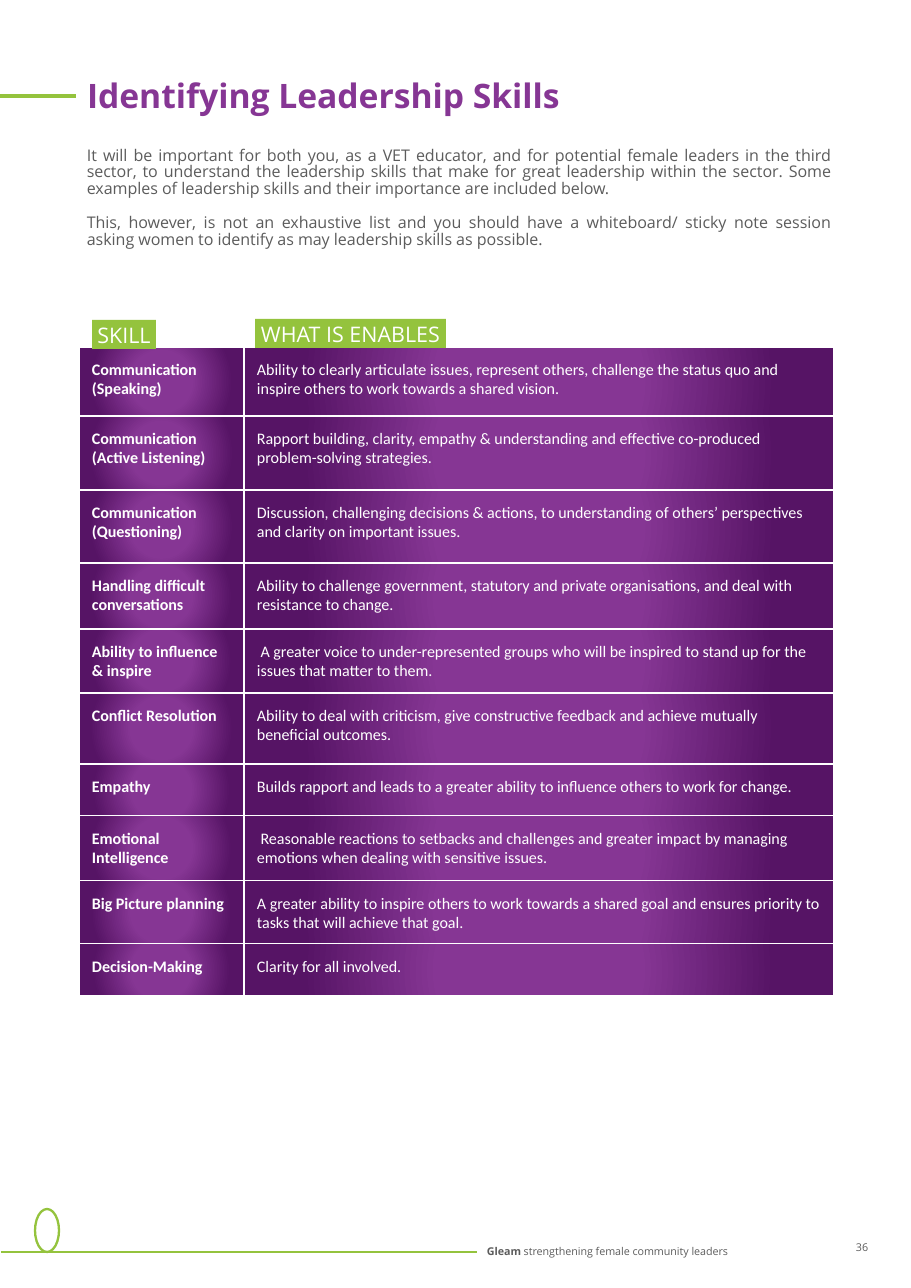
from lxml.etree import SubElement
from pptx import Presentation
from pptx.dml.color import RGBColor
from pptx.enum.shapes import MSO_CONNECTOR, MSO_SHAPE
from pptx.enum.text import MSO_ANCHOR, MSO_AUTO_SIZE, PP_ALIGN
from pptx.oxml import parse_xml
from pptx.oxml.ns import nsdecls, qn
from pptx.util import Emu, Pt

PURPLE = RGBColor(0x86, 0x36, 0x94)
DARK_PURPLE = RGBColor(0x56, 0x14, 0x65)
GREEN = RGBColor(0x94, 0xC3, 0x3D)
GREY = RGBColor(0x5C, 0x5C, 0x5C)
WHITE = RGBColor(0xFF, 0xFF, 0xFF)
HEADING_FONT = "Open Sans"
TABLE_FONT = "Calibri"
EMU_PER_PX = 8298

INTRO = [
    "It will be important for both you, as a VET educator, and for potential female leaders "
    "in the third sector, to understand the leadership skills that make for great leadership "
    "within the sector. Some examples of leadership skills and their importance are included below.",
    "This, however, is not an exhaustive list and you should have a whiteboard/ sticky note "
    "session asking women to identify as may leadership skills as possible.",
]
# Row height in px, skill, what it enables
SKILLS = [
    (69, "Communication\n(Speaking)",
     "Ability to clearly articulate issues, represent others, challenge the status quo and "
     "inspire others to work towards a shared vision."),
    (74, "Communication\n(Active Listening)",
     "Rapport building, clarity, empathy & understanding and effective co-produced "
     "problem-solving strategies."),
    (73, "Communication\n(Questioning)",
     "Discussion, challenging decisions & actions, to understanding of others’ perspectives "
     "and clarity on important issues."),
    (66, "Handling difficult conversations",
     "Ability to challenge government, statutory and private organisations, and deal with "
     "resistance to change."),
    (64, "Ability to influence & inspire",
     " A greater voice to under-represented groups who will be inspired to stand up for the "
     "issues that matter to them."),
    (71, "Conflict Resolution",
     "Ability to deal with criticism, give constructive feedback and achieve mutually "
     "beneficial outcomes."),
    (52, "Empathy",
     "Builds rapport and leads to a greater ability to influence others to work for change."),
    (65, "Emotional Intelligence",
     " Reasonable reactions to setbacks and challenges and greater impact by managing "
     "emotions when dealing with sensitive issues."),
    (63, "Big Picture planning",
     "A greater ability to inspire others to work towards a shared goal and ensures priority "
     "to tasks that will achieve that goal."),
    (52, "Decision-Making", "Clarity for all involved."),
]


def px(length):
    return Emu(length * EMU_PER_PX)


def style(para, size, color, name=HEADING_FONT, bold=False):
    para.font.size = Pt(size)
    para.font.name = name
    para.font.bold = bold
    para.font.color.rgb = color


def add_text_box(page, box, anchor=MSO_ANCHOR.TOP):
    shape = page.shapes.add_textbox(*map(px, box))
    shape.text_frame.word_wrap = True
    shape.text_frame.vertical_anchor = anchor
    return shape


def add_rule(page, left, right, top, width):
    line = page.shapes.add_connector(
        MSO_CONNECTOR.STRAIGHT, px(left), px(top), px(right), px(top))
    line.line.color.rgb = GREEN
    line.line.width = Pt(width)
    SubElement(line._element.spPr, qn("a:effectLst"))


def add_title(page, box):
    left, top, width, height = box
    title = page.shapes.title
    title.left, title.top, title.width, title.height = map(px, box)
    frame = title.text_frame
    frame.text = "Identifying Leadership Skills"
    frame.auto_size = MSO_AUTO_SIZE.NONE
    frame.vertical_anchor = MSO_ANCHOR.TOP
    para = frame.paragraphs[0]
    para.alignment = PP_ALIGN.LEFT
    para.line_spacing = Pt(24.4)
    style(para, 22, PURPLE, bold=True)
    add_rule(page, 0, left, top + 24, 2.25)


def add_intro(page, box):
    frame = add_text_box(page, box).text_frame
    frame.text = "\n".join(INTRO)
    for para in frame.paragraphs:
        para.alignment = PP_ALIGN.JUSTIFY
        para.line_spacing = Pt(11)
        para.space_after = Pt(11)
        style(para, 10.5, GREY)


def add_borders(cell):
    properties = cell._tc.get_or_add_tcPr()
    for side in ("lnL", "lnR", "lnT", "lnB"):
        properties.append(parse_xml(
            f'<a:{side} {nsdecls("a")} w="12700"><a:solidFill>'
            f'<a:srgbClr val="{WHITE}"/></a:solidFill></a:{side}>'))


def add_glow(cell):
    stops = "".join(
        f'<a:gs pos="{position}000"><a:srgbClr val="{color}"/></a:gs>'
        for position, color in ((4, PURPLE), (34, PURPLE), (80, DARK_PURPLE)))
    cell._tc.get_or_add_tcPr().append(parse_xml(
        f'<a:gradFill {nsdecls("a")} rotWithShape="1"><a:gsLst>{stops}</a:gsLst>'
        '<a:path path="circle"><a:fillToRect l="50000" t="50000" r="50000" b="50000"/>'
        '</a:path></a:gradFill>'))


def add_skills_table(page, box):
    left, top, width, header_height = box
    skill_width = 165
    heights = [header_height] + [height for height, _, _ in SKILLS]
    table = page.shapes.add_table(
        len(heights), 2, px(left), px(top), px(width), px(sum(heights))).table
    table.first_row = table.horz_banding = False
    table.columns[0].width = px(skill_width)
    table.columns[1].width = px(width - skill_width)
    for row, height in zip(table.rows, heights):
        row.height = px(height)

    # Open header row, covered by the labels
    for cell in table.rows[0].cells:
        cell.margin_top = cell.margin_bottom = 0
        style(cell.text_frame.paragraphs[0], 10.5, WHITE, TABLE_FONT)
        add_borders(cell)
        cell.fill.background()

    # Skill rows
    for row, (_, *texts) in zip(list(table.rows)[1:], SKILLS):
        for column, (cell, text) in enumerate(zip(row.cells, texts)):
            cell.text = text
            cell.margin_left = cell.margin_right = cell.margin_top = px(13)
            cell.margin_bottom = 0
            for para in cell.text_frame.paragraphs:
                style(para, 10.5, WHITE, TABLE_FONT, bold=column == 0)
            add_borders(cell)
            add_glow(cell)

    # Column labels
    for text, offset, drop, label_width in (
            ("SKILL", 13, 5, 64), ("WHAT IS ENABLES", 176, 4, 191)):
        label = add_text_box(
            page, (left + offset, top + drop, label_width, 29), MSO_ANCHOR.MIDDLE)
        label.fill.solid()
        label.fill.fore_color.rgb = GREEN
        frame = label.text_frame
        frame.word_wrap = False
        frame.margin_left = frame.margin_right = 0
        frame.margin_top = frame.margin_bottom = 0
        frame.text = text
        frame.paragraphs[0].alignment = PP_ALIGN.CENTER
        style(frame.paragraphs[0], 14, WHITE)


def add_footer(page, box):
    left, top, width, height = box
    emblem = page.shapes.add_shape(
        MSO_SHAPE.OVAL, px(left + 35), px(top), px(24), px(43))
    emblem.shadow.inherit = False
    emblem.fill.background()
    emblem.line.color.rgb = GREEN
    emblem.line.width = Pt(1.5)
    add_rule(page, left + 1, left + 477, top + 43, 1.5)

    strapline = add_text_box(page, (left + 476, top + 20, 357, 45), MSO_ANCHOR.MIDDLE)
    para = strapline.text_frame.paragraphs[0]
    style(para, 7, GREY)
    name = para.add_run()
    name.text = "Gleam"
    name.font.bold = True
    para.add_run().text = " strengthening female community leaders"

    number = add_text_box(page, (left + width - 233, top + 4, 201, height), MSO_ANCHOR.MIDDLE)
    number.text_frame.text = "36"
    para = number.text_frame.paragraphs[0]
    para.alignment = PP_ALIGN.RIGHT
    style(para, 7, GREY)


def main():
    deck = Presentation()
    deck.slide_width, deck.slide_height = px(911), px(1288)
    page = deck.slides.add_slide(deck.slide_layouts[5])
    add_footer(page, (0, 1209, 911, 68))
    add_title(page, (76, 72, 797, 64))
    add_intro(page, (76, 142, 767, 130))
    add_skills_table(page, (79, 315, 755, 32))
    deck.save("out.pptx")


if __name__ == "__main__":
    main()
